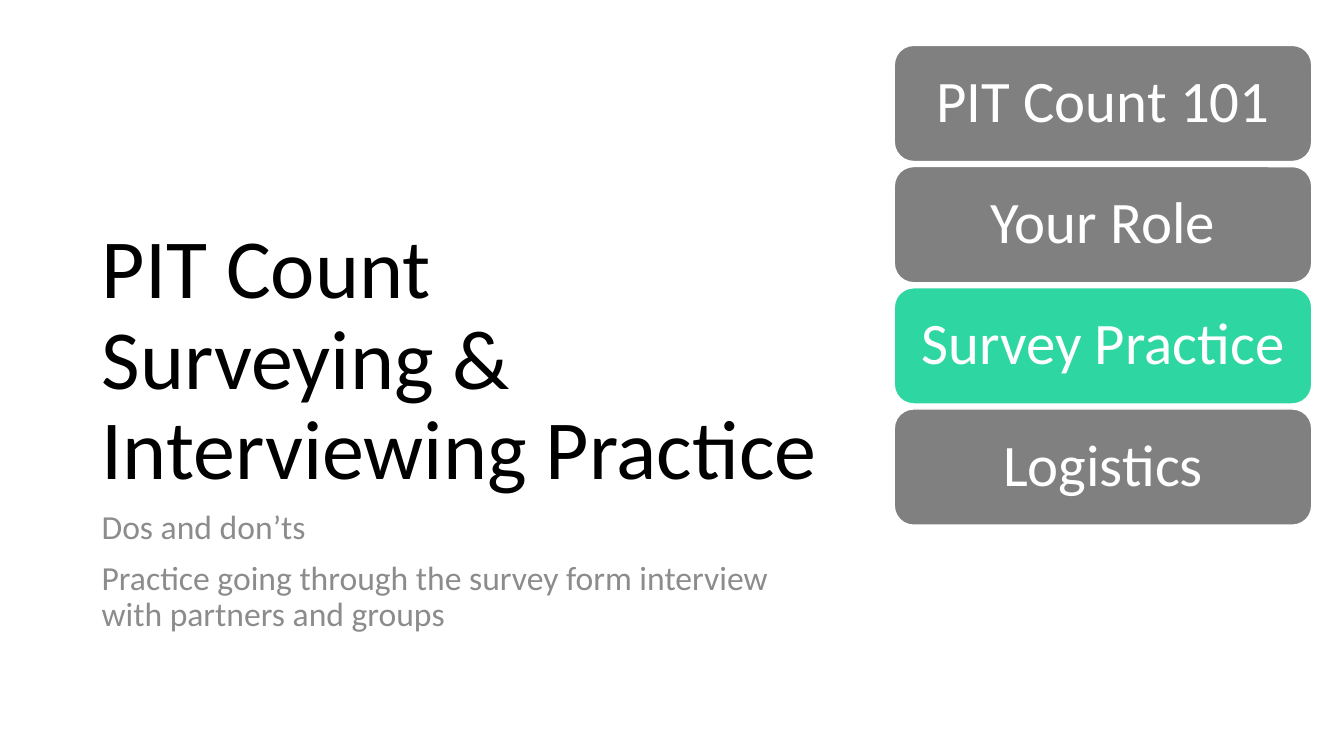
from pptx import Presentation
from pptx.dml.color import RGBColor
from pptx.enum.shapes import MSO_SHAPE
from pptx.enum.text import MSO_ANCHOR, MSO_AUTO_SIZE, PP_ALIGN
from pptx.util import Inches, Pt

ROUND = MSO_SHAPE.ROUNDED_RECTANGLE
TOP, MIDDLE, BOTTOM = MSO_ANCHOR.TOP, MSO_ANCHOR.MIDDLE, MSO_ANCHOR.BOTTOM
LEFT, CENTER = PP_ALIGN.LEFT, PP_ALIGN.CENTER
NO_FIT = MSO_AUTO_SIZE.NONE

FONT = "Calibri"
BLACK, WHITE, GRAY, GREEN = "000000", "FFFFFF", "808080", "2ED7A1"
MUTED = "8C8C8C"

TITLE = ["PIT Count ", "Surveying & ", "Interviewing Practice"]
NOTES = [
    ["Dos and don’ts"],
    ["Practice going through the survey form interview ",
     "with partners and groups"],
]
STEPS = ["PIT Count 101", "Your Role", "Survey Practice", "Logistics"]
ACTIVE = "Survey Practice"


def color(value):
    return RGBColor.from_string(value)


def write(frame, paras, size, tint, align, anchor, before=0):
    """Fill a text frame; each paragraph is a list of lines."""
    frame.word_wrap = True
    frame.auto_size = NO_FIT
    frame.vertical_anchor = anchor
    for i, lines in enumerate(paras):
        para = frame.paragraphs[0] if i == 0 else frame.add_paragraph()
        para.alignment = align
        para.line_spacing = 0.9
        para.space_before = Pt(before)
        for j, line in enumerate(lines):
            if j:
                para.add_line_break()
            run = para.add_run()
            run.text = line
            run.font.name = FONT
            run.font.size = Pt(size)
            run.font.color.rgb = color(tint)


def heading(slide, x, y, w, h):
    title = slide.shapes.title
    title.left, title.top = Inches(x), Inches(y)
    title.width, title.height = Inches(w), Inches(h)
    write(title.text_frame, [TITLE], 60, BLACK, LEFT, BOTTOM)


def details(slide, x, y, w, h):
    box = slide.shapes.add_textbox(Inches(x), Inches(y), Inches(w), Inches(h))
    write(box.text_frame, NOTES, 24, MUTED, LEFT, TOP, before=10)


def agenda(slide, x, y, w, h):
    """Stack the steps evenly and highlight the active one."""
    gap = 0.05
    tall = (h - gap * (len(STEPS) - 1)) / len(STEPS)
    for i, step in enumerate(STEPS):
        top = y + i * (tall + gap)
        card = slide.shapes.add_shape(
            ROUND, Inches(x), Inches(top), Inches(w), Inches(tall))
        card.shadow.inherit = False
        card.fill.solid()
        card.fill.fore_color.rgb = color(GREEN if step == ACTIVE else GRAY)
        card.line.color.rgb = color(WHITE)
        card.line.width = Pt(1)
        frame = card.text_frame
        frame.margin_left = frame.margin_right = Inches(0.17)
        frame.margin_top = frame.margin_bottom = Inches(0.09)
        write(frame, [[step]], 42, WHITE, CENTER, MIDDLE)


def main():
    deck = Presentation()
    deck.slide_width, deck.slide_height = Inches(13.33), Inches(7.5)
    slide = deck.slides.add_slide(deck.slide_layouts[5])
    # Title and notes
    heading(slide, 0.91, 1.87, 11.5, 3.12)
    details(slide, 0.91, 5.02, 11.5, 1.64)
    # Agenda steps on the right
    agenda(slide, 8.87, 0.45, 4.14, 4.76)
    deck.save("out.pptx")


if __name__ == "__main__":
    main()
